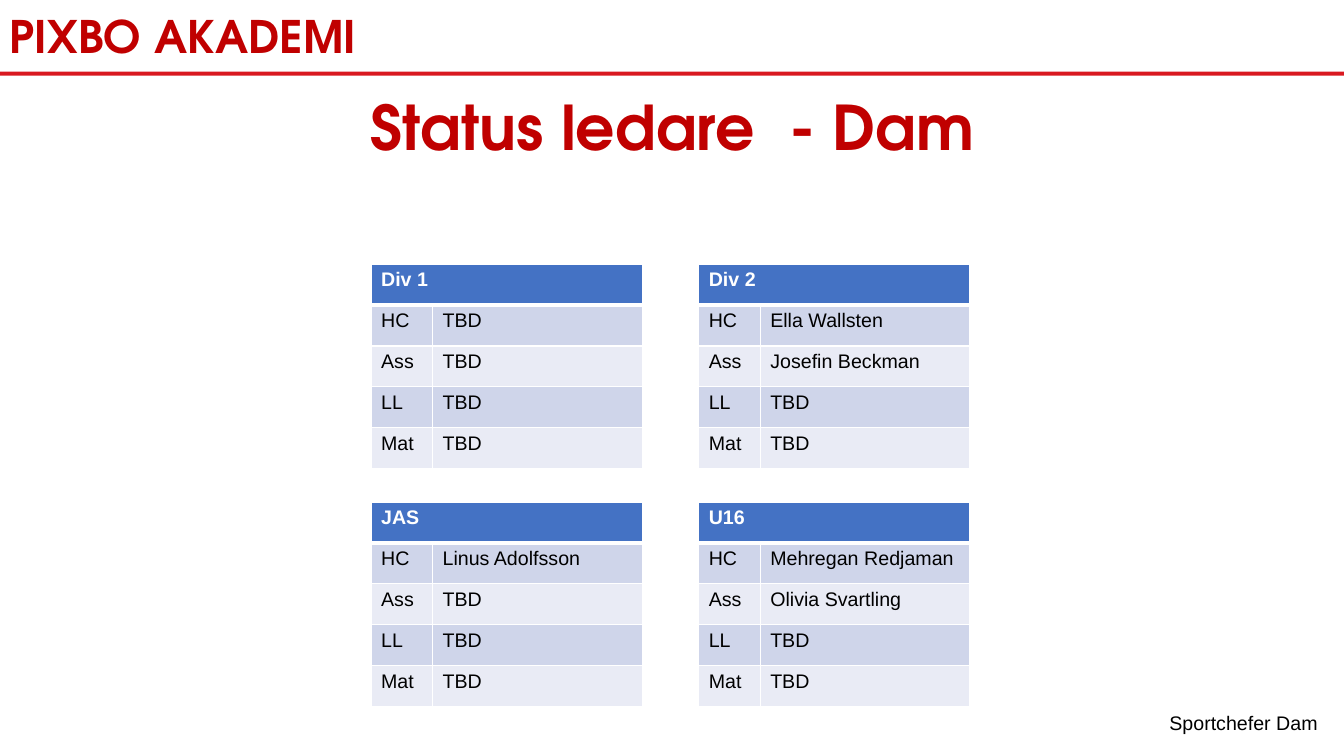
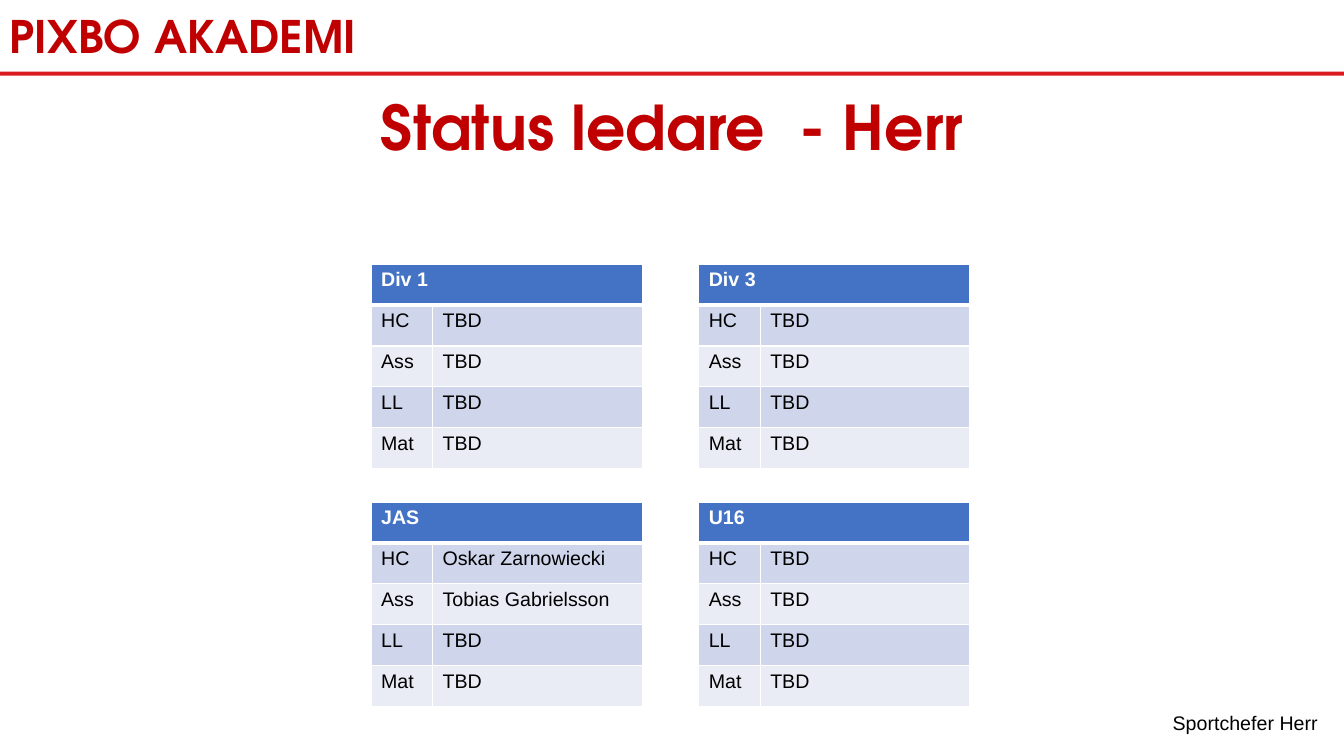
"""Build the leader status slides for the women's and men's teams."""
import dataclasses
import itertools

import lxml.etree
import pptx
import pptx.dml.color
import pptx.enum.shapes
import pptx.enum.text
import pptx.oxml.ns
import pptx.presentation
import pptx.shapes.autoshape
import pptx.slide
import pptx.table
import pptx.util

Inches = pptx.util.Inches
Pt = pptx.util.Pt
RGBColor = pptx.dml.color.RGBColor
Align = pptx.enum.text.PP_ALIGN
Anchor = pptx.enum.text.MSO_ANCHOR

WHITE = RGBColor(0xFF, 0xFF, 0xFF)
BLACK = RGBColor(0x00, 0x00, 0x00)
RULE_RED = RGBColor(0xD9, 0x19, 0x20)
TITLE_RED = RGBColor(0xC0, 0x00, 0x00)
HEADER_BLUE = RGBColor(0x44, 0x72, 0xC4)
ROW_FILLS = (RGBColor(0xCF, 0xD5, 0xEA), RGBColor(0xE9, 0xEB, 0xF5))

DISPLAY_FONT = "TeX Gyre Adventor"
BODY_FONT = "Arial"

SLIDE_WIDTH = Inches(13.33)
BAND_HEIGHT = Inches(0.71)
FOOTER_RIGHT = Inches(13.17)
TABLE_LEFTS = (Inches(3.68), Inches(6.93))
TABLE_TOPS = (Inches(2.62), Inches(4.98))
COLUMN_WIDTHS = (Inches(0.61), Inches(2.08))
TABLE_HEIGHT = Inches(2.03)
ROLES = ("HC", "Ass", "LL", "Mat")


@dataclasses.dataclass(frozen=True)
class Team:
    """A team and its leaders, in the order of ROLES."""
    name: str
    head_coach: str = "TBD"
    assistant: str = "TBD"
    team_lead: str = "TBD"
    equipment: str = "TBD"

    def rows(self) -> list[tuple[str, str]]:
        """Pair every role with its holder."""
        holders = (self.head_coach, self.assistant, self.team_lead, self.equipment)
        return list(zip(ROLES, holders))


@dataclasses.dataclass(frozen=True)
class Section:
    """One slide: a section with four teams, row by row."""
    title: str
    teams: tuple[Team, ...]
    footer: str
    footer_width: float


SECTIONS = (
    Section(
        "Status ledare  - Dam",
        (
            Team("Div 1"),
            Team("Div 2", "Ella Wallsten", "Josefin Beckman"),
            Team("JAS", "Linus Adolfsson"),
            Team("U16", "Mehregan Redjaman", "Olivia Svartling"),
        ),
        "Sportchefer Dam",
        1.68,
    ),
    Section(
        "Status ledare  - Herr",
        (
            Team("Div 1"),
            Team("Div 3"),
            Team("JAS", "Oskar Zarnowiecki", "Tobias Gabrielsson"),
            Team("U16"),
        ),
        "Sportchefer Herr",
        1.65,
    ),
)


def write(frame, text: str, size: int, font_name: str, color: RGBColor,
          bold: bool = False, align: Align = Align.LEFT) -> None:
    """Fill a text frame with one styled paragraph."""
    paragraph = frame.paragraphs[0]
    paragraph.text = text
    paragraph.alignment = align
    paragraph.font.size = Pt(size)
    paragraph.font.name = font_name
    paragraph.font.bold = bold
    paragraph.font.color.rgb = color


def add_band(slide: pptx.slide.Slide, top: int, color: RGBColor) -> None:
    """Draw a band across the slide."""
    band = slide.shapes.add_shape(
        pptx.enum.shapes.MSO_SHAPE.RECTANGLE, 0, top, SLIDE_WIDTH, BAND_HEIGHT)
    band.shadow.inherit = False
    band.fill.solid()
    band.fill.fore_color.rgb = color
    band.line.fill.background()


def add_heading(slide: pptx.slide.Slide, title: str) -> None:
    """Draw the academy band and the slide title."""
    add_band(slide, Inches(0.04), RULE_RED)
    add_band(slide, 0, WHITE)
    academy = slide.shapes.add_textbox(0, Inches(0.03), Inches(3.67), Inches(0.64)).text_frame
    academy.vertical_anchor = Anchor.MIDDLE
    write(academy, "PIXBO AKADEMI", 32, DISPLAY_FONT, TITLE_RED, bold=True)

    heading = slide.shapes.add_textbox(
        Inches(0.92), Inches(0.75), Inches(11.5), Inches(1.1)).text_frame
    heading.word_wrap = True
    heading.vertical_anchor = Anchor.MIDDLE
    write(heading, title, 44, DISPLAY_FONT, TITLE_RED, bold=True, align=Align.CENTER)
    heading.paragraphs[0].line_spacing = 0.9


def add_border(cell: pptx.table._Cell, side: str, width: int) -> None:
    """Give one side of a cell a white line."""
    qn = pptx.oxml.ns.qn
    properties = cell._tc.get_or_add_tcPr()
    line = lxml.etree.SubElement(properties, qn(f"a:ln{side}"), w=str(Pt(width)))
    fill = lxml.etree.SubElement(line, qn("a:solidFill"))
    lxml.etree.SubElement(fill, qn("a:srgbClr"), val=str(WHITE))


def style_cell(cell: pptx.table._Cell, row: int) -> None:
    """Set the borders and fill that belong to a table row."""
    widths = {"L": 1, "R": 1, "T": 3 if row == 1 else 1, "B": 3 if row == 0 else 1}
    for side, width in widths.items():
        add_border(cell, side, width)
    cell.fill.solid()
    cell.fill.fore_color.rgb = HEADER_BLUE if row == 0 else ROW_FILLS[(row - 1) % 2]


def add_team(slide: pptx.slide.Slide, team: Team, left: int, top: int) -> None:
    """Draw the table of one team."""
    rows = [(team.name, ""), *team.rows()]
    table = slide.shapes.add_table(
        len(rows), len(COLUMN_WIDTHS), left, top, sum(COLUMN_WIDTHS), TABLE_HEIGHT).table
    for column, width in zip(table.columns, COLUMN_WIDTHS):
        column.width = width
    for row, texts in enumerate(rows):
        for column, text in enumerate(texts):
            cell = table.cell(row, column)
            style_cell(cell, row)
            if text:
                write(cell.text_frame, text, 14, BODY_FONT,
                      WHITE if row == 0 else BLACK, bold=row == 0)
    table.cell(0, 0).merge(table.cell(0, 1))


def add_footer(slide: pptx.slide.Slide, section: Section) -> None:
    """Draw the line naming those responsible, ending at the right margin."""
    width = Inches(section.footer_width)
    footer = slide.shapes.add_textbox(
        FOOTER_RIGHT - width, Inches(7), width, Inches(0.34)).text_frame
    footer.word_wrap = False
    write(footer, section.footer, 14, BODY_FONT, BLACK, align=Align.RIGHT)


def add_section(deck: pptx.presentation.Presentation, section: Section) -> None:
    """Add the slide of one section."""
    slide = deck.slides.add_slide(deck.slide_layouts[6])
    add_heading(slide, section.title)
    for team, (top, left) in zip(section.teams, itertools.product(TABLE_TOPS, TABLE_LEFTS)):
        add_team(slide, team, left, top)
    add_footer(slide, section)


def main() -> None:
    """Build and save the presentation."""
    deck = pptx.Presentation()
    deck.slide_width = SLIDE_WIDTH
    deck.slide_height = Inches(7.5)
    for section in SECTIONS:
        add_section(deck, section)
    deck.save("out.pptx")


if __name__ == "__main__":
    main()
